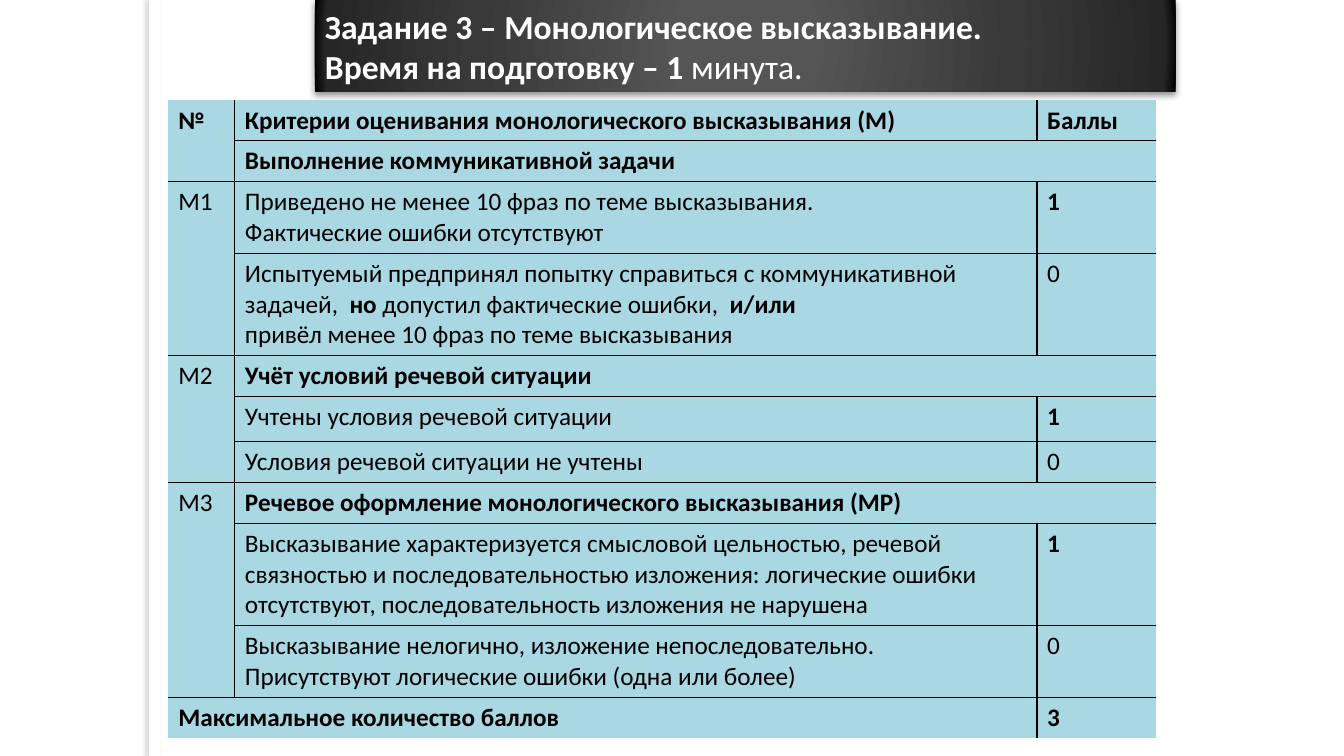
from dataclasses import dataclass

from lxml.etree import SubElement
from pptx import Presentation
from pptx.dml.color import RGBColor
from pptx.enum.shapes import MSO_SHAPE
from pptx.enum.text import MSO_ANCHOR, MSO_AUTO_SIZE, PP_ALIGN
from pptx.oxml import parse_xml
from pptx.oxml.ns import nsdecls, qn
from pptx.util import Pt

# Text between asterisks is bold; a line break starts a new paragraph.
TITLE = "*Задание 3 – Монологическое высказывание.*\n*Время на подготовку – 1* минута."

# Number, criterion, points, row height.
# No number: the number above runs on. No points: the criterion takes both columns.
ROWS = [
    ("*№*", "*Критерии оценивания монологического высказывания (М)*", "*Баллы*", 28.8),
    (None, "*Выполнение коммуникативной задачи*", None, 28.8),
    ("М1", "Приведено не менее 10 фраз по теме высказывания.\n"
           "Фактические ошибки отсутствуют", "*1*", 50.7),
    (None, "Испытуемый предпринял попытку справиться с коммуникативной задачей,  "
           "*но *допустил фактические ошибки,  *и/или*\n"
           "привёл менее 10 фраз по теме высказывания", "0", 72),
    ("М2", "*Учёт условий речевой ситуации*", None, 29.2),
    (None, "Учтены условия речевой ситуации", "*1*", 32.2),
    (None, "Условия речевой ситуации не учтены", "0", 29.2),
    ("М3", "*Речевое оформление монологического высказывания (МР)*", None, 29.2),
    (None, "Высказывание характеризуется смысловой цельностью, речевой связностью "
           "и последовательностью изложения: логические ошибки отсутствуют, "
           "последовательность изложения не нарушена", "*1*", 72),
    (None, "Высказывание нелогично, изложение непоследовательно.\n"
           "Присутствуют логические ошибки (одна или более)", "0", 50.2),
]
TOTAL = ("*Максимальное количество баллов*", "*3*", 29.2)

COLS = (47.6, 573, 85)
TABLE = (120.2, 71.4)
BANNER = (224.9, 0, 614.9, 65.6)
STRIP = (106.5, 0, 7.9, 540)
PLAIN = "{2D5ABB26-0587-4C30-8999-92F81FD0307C}"


@dataclass(frozen=True)
class Theme:
    font: str = "Calibri"
    head: int = 24
    body: int = 18
    ink: str = "000000"
    paper: str = "FFFFFF"
    cell: str = "A9D7E2"
    edge: str = "736F63"
    glow: tuple = ((0, "555555"), (15, "555555"), (62, "393939"), (97, "262626"), (100, "000000"))


theme = Theme()


def write(frame, text, size, color):
    for i, line in enumerate(text.split("\n")):
        para = frame.paragraphs[0] if i == 0 else frame.add_paragraph()
        para.alignment = PP_ALIGN.LEFT
        for j, part in enumerate(line.split("*")):
            if not part:
                continue
            run = para.add_run()
            run.text = part
            style = {"name": theme.font, "size": Pt(size), "bold": j % 2 == 1}
            for key, value in style.items():
                setattr(run.font, key, value)
            run.font.color.rgb = RGBColor.from_string(color)


def paint(target, color):
    target.fill.solid()
    target.fill.fore_color.rgb = RGBColor.from_string(color)


def shade(shape, color, alpha, blur, dist, angle):
    shape.shadow.inherit = False
    effects = shape._element.spPr.find(qn("a:effectLst"))
    effects.append(parse_xml(
        f'<a:outerShdw {nsdecls("a")} blurRad="{Pt(blur)}" dist="{Pt(dist)}" '
        f'dir="{angle * 60000}" algn="ctr" rotWithShape="0"><a:srgbClr val="{color}">'
        f'<a:alpha val="{alpha * 1000}"/></a:srgbClr></a:outerShdw>'))


def glow(shape):
    """Fill the shape with a gradient that spreads from its centre."""
    shape.fill.gradient()
    old = shape._element.spPr.find(qn("a:gradFill"))
    stops = "".join(f'<a:gs pos="{pos * 1000}"><a:srgbClr val="{color}"/></a:gs>'
                    for pos, color in theme.glow)
    new = parse_xml(
        f'<a:gradFill {nsdecls("a")} rotWithShape="1"><a:gsLst>{stops}</a:gsLst>'
        '<a:path path="circle"><a:fillToRect l="50000" t="50000" r="50000" b="50000"/>'
        '</a:path></a:gradFill>')
    old.getparent().replace(old, new)


def rule(cell, sides):
    """Draw lines on the given sides (name to yes or no), before the cell fill."""
    props = cell._tc.get_or_add_tcPr()
    for side, shown in sides.items():
        line = SubElement(props, qn(f"a:ln{side}"), w=str(Pt(1)))
        if shown:
            fill = SubElement(line, qn("a:solidFill"))
            SubElement(fill, qn("a:srgbClr"), val=theme.ink)
        else:
            SubElement(line, qn("a:noFill"))


def add_title(slide):
    title = slide.shapes.title
    for key, value in zip(("left", "top", "width", "height"), BANNER):
        setattr(title, key, Pt(value))
    glow(title)
    shade(title, theme.ink, 43, 5, 2, 90)
    frame = title.text_frame
    style = {"word_wrap": True, "auto_size": MSO_AUTO_SIZE.NONE,
             "vertical_anchor": MSO_ANCHOR.MIDDLE}
    for key, value in style.items():
        setattr(frame, key, value)
    write(frame, TITLE, theme.head, theme.paper)


def add_strip(slide):
    strip = slide.shapes.add_shape(MSO_SHAPE.RECTANGLE, *map(Pt, STRIP))
    paint(strip, theme.paper)
    strip.line.fill.background()
    shade(strip, theme.edge, 25, 3, 3, 180)


def add_grid(slide):
    label, points, last = TOTAL
    rows = ROWS + [(label, None, points, last)]
    count = len(rows)
    tall = sum(row[3] for row in rows)
    box = map(Pt, (*TABLE, sum(COLS), tall))
    table = slide.shapes.add_table(count, len(COLS), *box).table
    table.first_row = table.horz_banding = False
    table._tbl.tblPr.find(qn("a:tableStyleId")).text = PLAIN
    for col, width in zip(table.columns, COLS):
        col.width = Pt(width)

    starts = [r for r, row in enumerate(rows) if row[0]]
    for top, end in zip(starts, starts[1:] + [count]):
        if end - top > 1:
            table.cell(top, 0).merge(table.cell(end - 1, 0))
    for r, (*texts, height) in enumerate(rows):
        table.rows[r].height = Pt(height)
        if texts[1] is None:
            table.cell(r, 0).merge(table.cell(r, 1))
        elif texts[2] is None:
            table.cell(r, 1).merge(table.cell(r, 2))
        for c, text in enumerate(texts):
            cell = table.cell(r, c)
            if not cell.is_spanned:
                wide = cell.span_width if cell.is_merge_origin else 1
                high = cell.span_height if cell.is_merge_origin else 1
                rule(cell, {"L": c > 0, "R": c + wide < len(COLS),
                            "T": r > 0, "B": r + high < count})
                write(cell.text_frame, text, theme.body, theme.ink)
            paint(cell, theme.cell)


def main():
    deck = Presentation()
    deck.slide_width, deck.slide_height = Pt(960), Pt(540)
    slide = deck.slides.add_slide(deck.slide_layouts[5])
    add_strip(slide)
    add_title(slide)
    add_grid(slide)
    deck.save("out.pptx")


if __name__ == "__main__":
    main()
